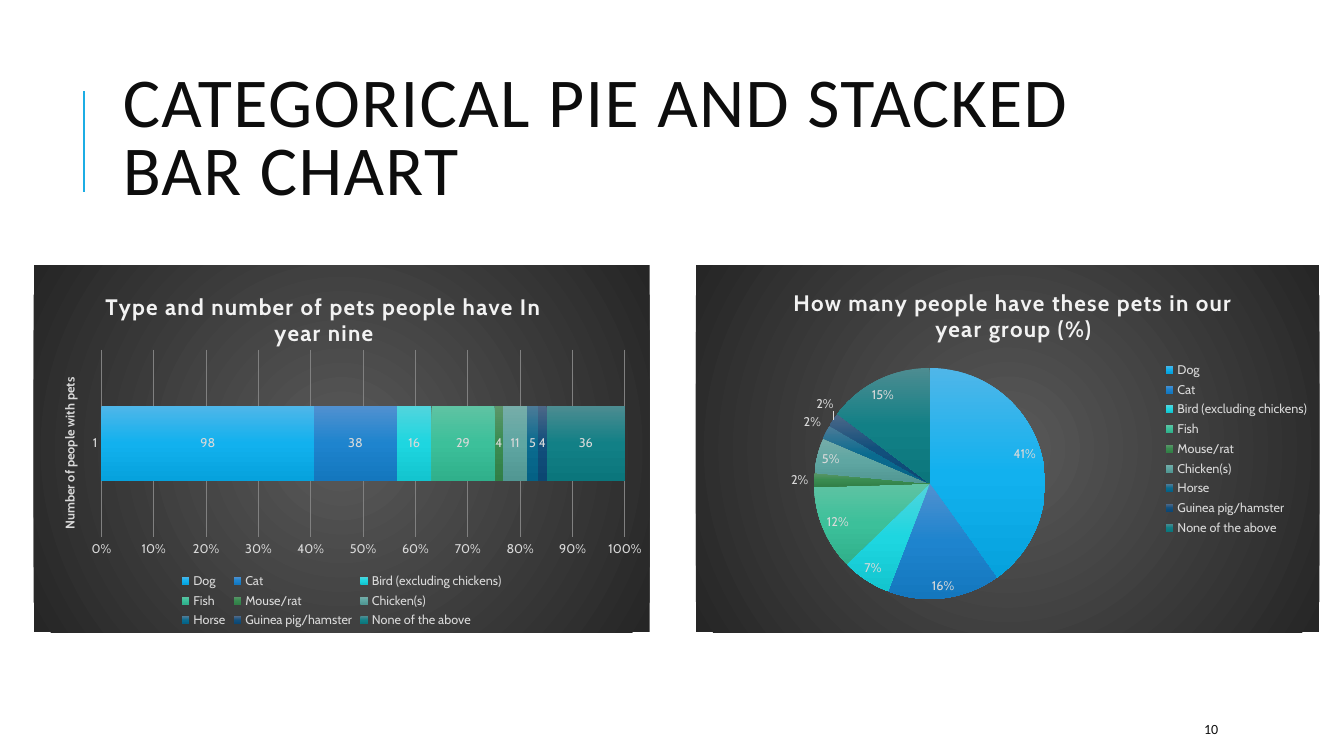
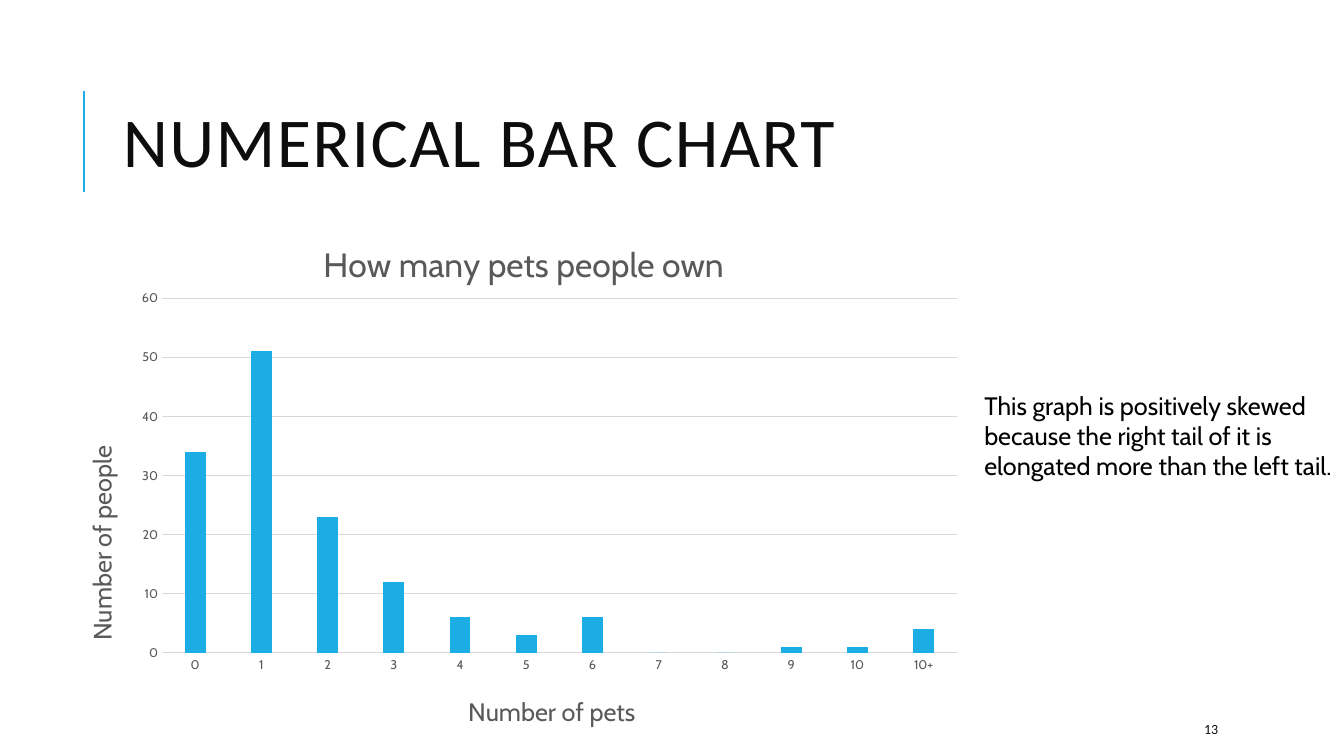
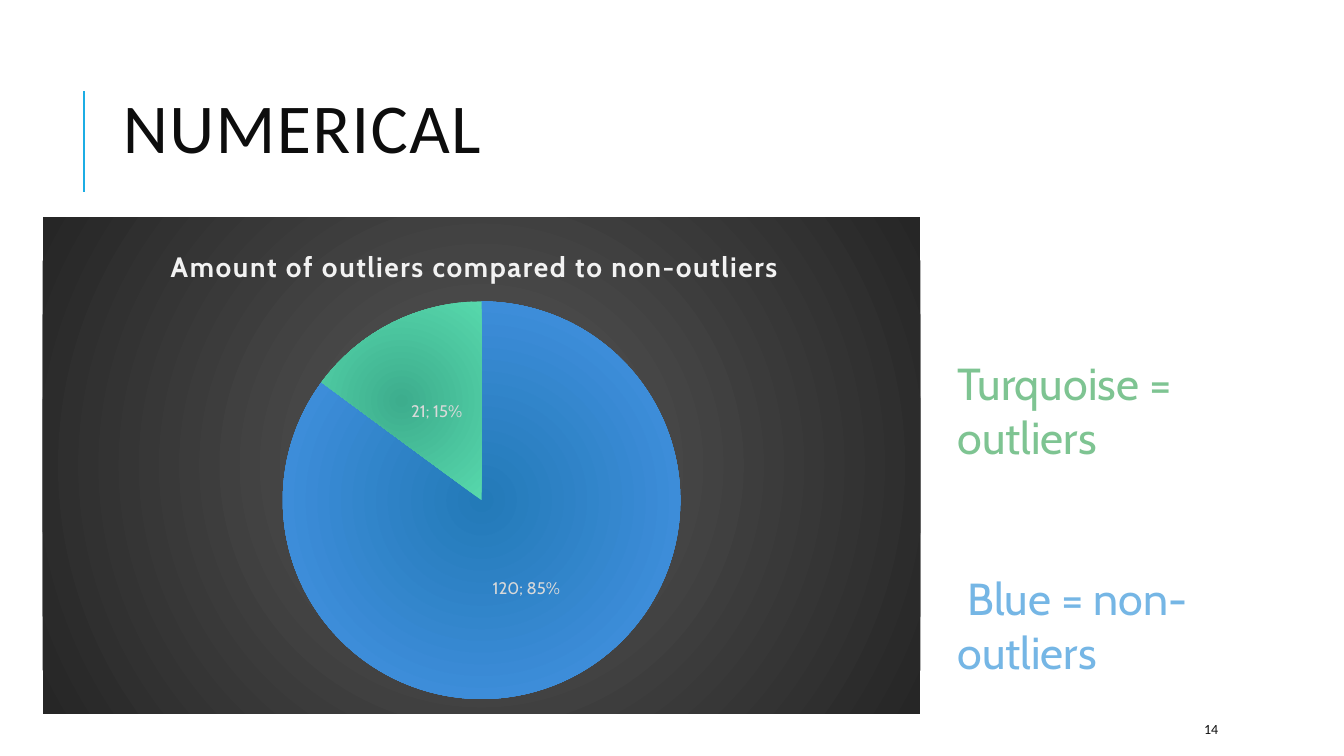
from lxml.etree import SubElement as Sub
from pptx import Presentation
from pptx.chart.data import CategoryChartData as Data
from pptx.dml.color import RGBColor
from pptx.enum.chart import XL_CHART_TYPE as Kind
from pptx.enum.chart import XL_LABEL_POSITION as Spot
from pptx.enum.chart import XL_LEGEND_POSITION as Side
from pptx.enum.chart import XL_TICK_MARK as Tick
from pptx.enum.shapes import MSO_CONNECTOR as Line
from pptx.enum.text import MSO_ANCHOR as Anchor
from pptx.enum.text import MSO_AUTO_SIZE as Fit
from pptx.enum.text import PP_ALIGN as Align
from pptx.oxml.ns import qn
from pptx.util import Pt

# Fonts and colours
HEAD, BODY = "Calibri", "Cabin"
rgb = RGBColor.from_string
BLUE, INK, BLACK = rgb("1CADE4"), rgb("0D0D0D"), rgb("000000")
GREY, RULE, MID = rgb("595959"), rgb("D9D9D9"), rgb("808080")
PALE, DARK = rgb("F2F2F2"), rgb("262626")
GREEN, SKY = rgb("7EC492"), rgb("75B6E5")
PIE_BLUE = (rgb("237AB8"), rgb("4895E7"))
PIE_GREEN = (rgb("3DAD8D"), rgb("57D8AC"))

# Pet, people, percent, gradient from top to bottom
PETS = [
    ("Dog", 98, 41, "4FB6E9 12B1EE 06A2DD"),
    ("Cat", 38, 16, "5191D0 1E84CE 1477BE"),
    ("Bird (excluding chickens)", 16, 7, "52D5DD 1ED6E0 13C5CF"),
    ("Fish", 29, 12, "5FC3A3 3CC09A 30B08B"),
    ("Mouse/rat", 4, 2, "5C966A 3A8C51 317F47"),
    ("Chicken(s)", 11, 5, "76ADA9 5FA6A2 519793"),
    ("Horse", 5, 2, "4C7B98 0A6B8F 046185"),
    ("Guinea pig/hamster", 4, 2, "4D6888 124F7C 0C4772"),
    ("None of the above", 36, 15, "4D8C91 128086 0B767C"),
]
NAMES = [pet[0] for pet in PETS]
SHADES = [[rgb(code) for code in pet[3].split()] for pet in PETS]
OWNED = {"0": 34, "1": 51, "2": 23, "3": 12, "4": 6, "5": 3, "6": 6,
         "7": 0, "8": 0, "9": 1, "10": 1, "10+": 4}


# Text
def style(font, size, color, name=BODY, bold=False):
    font.size, font.name, font.bold = Pt(size), name, bold
    font.color.rgb = color


def add_run(para, text, size, color, name=BODY, bold=False, gap=0):
    run = para.add_run()
    run.text = text
    style(run.font, size, color, name, bold)
    if gap:
        run.font._element.set("spc", str(gap * 100))


def add_text(slide, box, anchor=Anchor.TOP):
    frame = slide.shapes.add_textbox(*map(Pt, box)).text_frame
    frame.word_wrap = True
    frame.vertical_anchor = anchor
    return frame


# Shared slide frame: title, accent line, page number
def add_slide(deck, title, top, page):
    slide = deck.slides.add_slide(deck.slide_layouts[5])
    head = slide.shapes.title
    head.left, head.top, head.width, head.height = map(
        Pt, (80.5, top, 765.5, 118))
    frame = head.text_frame
    frame.auto_size, frame.word_wrap = Fit.NONE, True
    frame.vertical_anchor = Anchor.MIDDLE
    para = frame.paragraphs[0]
    para.alignment, para.line_spacing = Align.LEFT, 0.8
    add_run(para, title, 50, INK, HEAD, gap=1)

    line = slide.shapes.add_connector(
        Line.STRAIGHT, Pt(60), Pt(137), Pt(60), Pt(65))
    line.line.color.rgb, line.line.width = BLUE, Pt(1.5)
    Sub(line._element.spPr, qn("a:effectLst"))

    foot = add_text(slide, (853, 510, 76.5, 21.5), Anchor.MIDDLE)
    add_run(foot.paragraphs[0], page, 10, INK, HEAD)
    return slide


# Gradients: a round one takes its focus in percent
def paint(props, colors, focus=None):
    grad = Sub(props, qn("a:gradFill"), rotWithShape="1")
    stops = Sub(grad, qn("a:gsLst"))
    for i, color in enumerate(colors):
        pos = 100000 * i // (len(colors) - 1)
        stop = Sub(stops, qn("a:gs"), pos=str(pos))
        Sub(stop, qn("a:srgbClr"), val=str(color))
    if focus is None:
        Sub(grad, qn("a:lin"), ang="5400000", scaled="0")
    else:
        way = Sub(grad, qn("a:path"), path="circle")
        Sub(way, qn("a:fillToRect"), **dict.fromkeys("ltrb", str(focus * 1000)))


def paint_part(part, colors, focus=None):
    paint(part.format._element.get_or_add_spPr(), colors, focus)


# Chart parts
def place(elem, spot):
    """Set the layout of a title (x, y) or plot area (x, y, w, h)."""
    for old in elem.findall(qn("c:layout")):
        elem.remove(old)
    layout = Sub(elem, qn("c:layout"))
    elem.insert(0 if elem.find(qn("c:tx")) is None else 1, layout)
    hand = Sub(layout, qn("c:manualLayout"))
    if len(spot) == 4:
        Sub(hand, qn("c:layoutTarget"), val="inner")
    for key in "xy":
        Sub(hand, qn(f"c:{key}Mode"), val="edge")
    for key, val in zip("xywh", spot):
        Sub(hand, qn(f"c:{key}"), val=str(val))


def set_title(title, text, spot, size, color, bold=False, gap=0, turn=False):
    frame = title.text_frame
    add_run(frame.paragraphs[0], text, size, color, bold=bold, gap=gap)
    if turn:
        props = title.element.find(".//" + qn("a:bodyPr"))
        props.set("rot", "-5400000")
        props.set("vert", "horz")
    place(title.element, spot)


def add_chart(slide, kind, box, cats, rows, plot, dark=True):
    data = Data()
    data.categories = cats
    for name, vals in rows:
        data.add_series(name, vals)
    chart = slide.shapes.add_chart(kind, *map(Pt, box), data).chart
    style(chart.font, 10, BLACK)
    chart.has_legend = False
    root = chart.element.find(qn("c:chart"))
    place(root.find(qn("c:plotArea")), plot)
    back = Sub(chart.element, qn("c:spPr"))
    root.addnext(back)
    if dark:
        paint(back, (GREY, DARK), 50)
    else:
        Sub(back, qn("a:noFill"))
    Sub(Sub(back, qn("a:ln")), qn("a:noFill"))
    return chart


def add_legend(chart, side):
    chart.has_legend = True
    chart.legend.position = side
    chart.legend.include_in_layout = False
    style(chart.legend.font, 9, RULE)


def add_labels(row, size, spot=None, form=None, share=False):
    labels = row.data_labels
    labels.show_value = True
    labels.show_percentage = share
    style(labels.font, size, RULE)
    if spot is not None:
        labels.position = spot
    if form:
        labels.number_format, labels.number_format_is_linked = form, False


def set_axis(axis, color, line=None, grid=None):
    axis.major_tick_mark = axis.minor_tick_mark = Tick.NONE
    style(axis.tick_labels.font, 9, color)
    axis.has_major_gridlines = grid is not None
    if grid is not None:
        rule = axis.major_gridlines.format.line
        rule.color.rgb, rule.width = grid, Pt(0.75)
    if line is None:
        axis.format.line.fill.background()
    else:
        axis.format.line.color.rgb = line
        axis.format.line.width = Pt(0.75)


def set_scale(axis, top, step):
    axis.minimum_scale, axis.maximum_scale, axis.major_unit = 0, top, step


# Slides
def pet_types(deck):
    slide = add_slide(deck, "CATEGORICAL PIE AND STACKED BAR CHART", 42, "10")

    bar = add_chart(slide, Kind.BAR_STACKED_100, (24, 189.5, 440, 262), ["1"],
                    [(pet[0], [pet[1]]) for pet in PETS],
                    (0.11, 0.23, 0.85, 0.51))
    set_title(bar.chart_title, "Type and number of pets people have In year nine",
              (0.11, 0.06), 16, PALE, True, 1)
    plot = bar.plots[0]
    plot.gap_width, plot.overlap, plot.vary_by_categories = 150, 100, False
    for row, shade in zip(plot.series, SHADES):
        paint_part(row, shade)
        add_labels(row, 9)
    set_axis(bar.category_axis, RULE)
    set_title(bar.category_axis.axis_title, "Number of people with pets",
              (0.04, 0.3), 9, RULE, True, turn=True)
    set_axis(bar.value_axis, RULE, grid=MID)
    set_scale(bar.value_axis, 1, 0.1)
    ticks = bar.value_axis.tick_labels
    ticks.number_format, ticks.number_format_is_linked = "0%", False
    add_legend(bar, Side.BOTTOM)

    pie = add_chart(slide, Kind.PIE, (497, 189.5, 445.5, 262), NAMES,
                    [("Series 1", [pet[2] for pet in PETS])],
                    (0.07, 0.28, 0.61, 0.63))
    set_title(pie.chart_title,
              "How many people have these pets in our year group (%)",
              (0.15, 0.05), 16, PALE, True, 1)
    row = pie.plots[0].series[0]
    for i, shade in enumerate(SHADES):
        paint_part(row.points[i], shade)
    add_labels(row, 9, Spot.BEST_FIT, '0"%"')
    add_legend(pie, Side.RIGHT)


def pet_counts(deck):
    slide = add_slide(deck, "NUMERICAL BAR CHART", 46, "13")
    note = add_text(slide, (696, 275, 272, 73))
    add_run(note.paragraphs[0],
            "This graph is positively skewed because the right tail of it is "
            "elongated more than the left tail.", 18, BLACK)

    chart = add_chart(slide, Kind.COLUMN_CLUSTERED, (44, 152.5, 652.5, 378),
                      list(OWNED), [("Series 1", list(OWNED.values()))],
                      (0.11, 0.16, 0.87, 0.67), dark=False)
    set_title(chart.chart_title, "How many pets people own",
              (0.28, 0.04), 24, GREY)
    plot = chart.plots[0]
    plot.gap_width, plot.overlap, plot.vary_by_categories = 219, -27, False
    fill = plot.series[0].format.fill
    fill.solid()
    fill.fore_color.rgb = BLUE
    set_axis(chart.category_axis, GREY, line=RULE)
    set_title(chart.category_axis.axis_title, "Number of pets",
              (0.44, 0.9), 18, GREY)
    set_axis(chart.value_axis, GREY, grid=RULE)
    set_scale(chart.value_axis, 60, 10)
    set_title(chart.value_axis.axis_title, "Number of people",
              (0.02, 0.43), 18, GREY, turn=True)


def outliers(deck):
    slide = add_slide(deck, "NUMERICAL", 36.5, "14")
    pie = add_chart(slide, Kind.PIE, (30.5, 155, 627, 355), ["1", "2"],
                    [("Series 1", (120, 21))], (0.27, 0.17, 0.46, 0.8))
    set_title(pie.chart_title, "Amount of outliers compared to non-outliers",
              (0.14, 0.05), 20, PALE, True, 1)
    row = pie.plots[0].series[0]
    for i, shade in enumerate((PIE_BLUE, PIE_GREEN)):
        paint_part(row.points[i], shade, 100)
    add_labels(row, 12, Spot.CENTER, share=True)

    key = add_text(slide, (677, 250.5, 263, 163))
    add_run(key.paragraphs[0], "Turquoise = outliers", 32, GREEN)
    para = key.add_paragraph()
    para.space_before = Pt(77)
    add_run(para, " ", 32, GREEN)
    add_run(para, "Blue = non-outliers", 32, SKY)


def main():
    deck = Presentation()
    deck.slide_width, deck.slide_height = Pt(960), Pt(540)
    pet_types(deck)
    pet_counts(deck)
    outliers(deck)
    deck.save("out.pptx")


if __name__ == "__main__":
    main()
